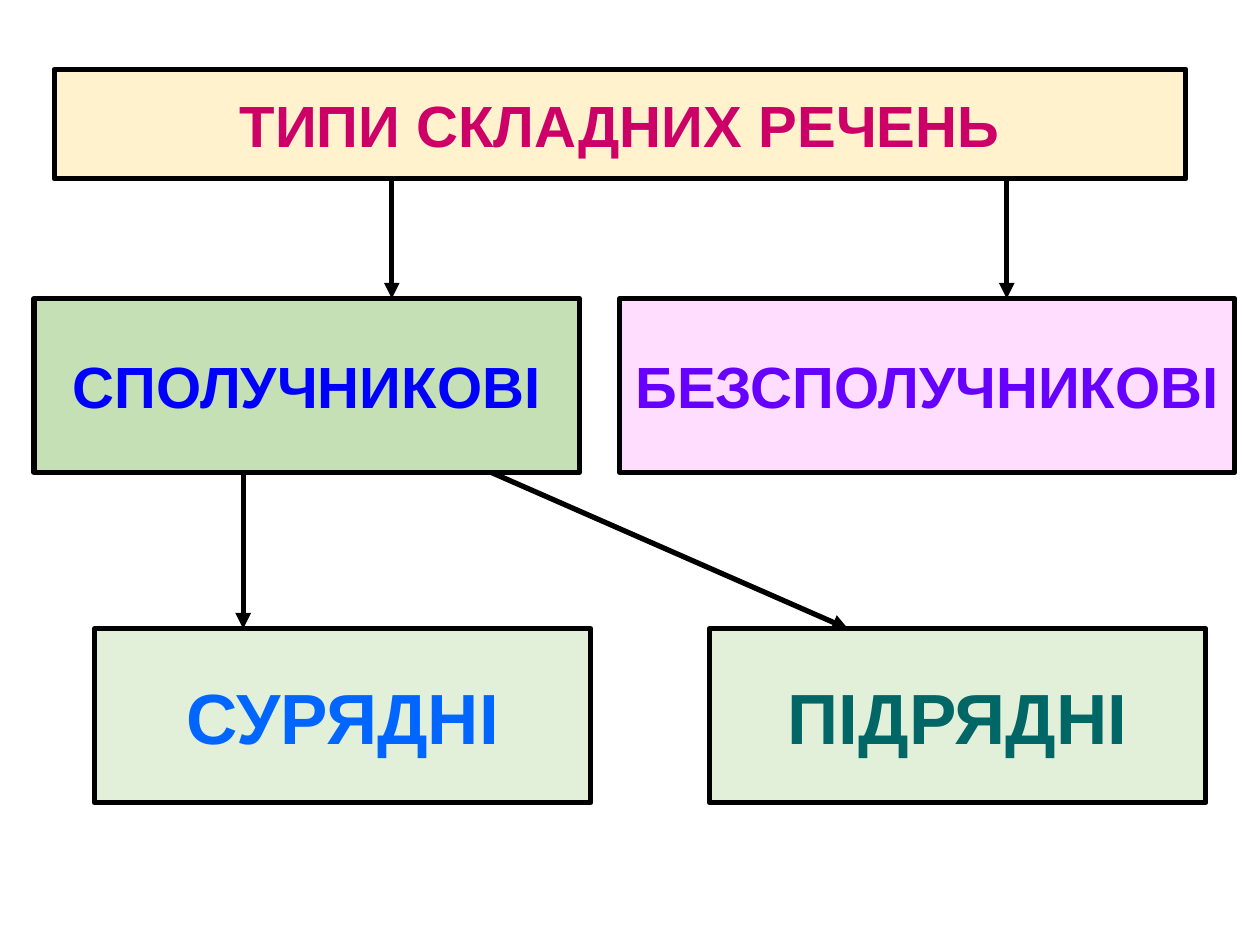
from pptx import Presentation
from pptx.dml.color import RGBColor
from pptx.enum.shapes import MSO_CONNECTOR, MSO_SHAPE
from pptx.enum.text import MSO_ANCHOR, MSO_AUTO_SIZE, PP_ALIGN
from pptx.oxml.ns import qn
from pptx.util import Pt
from lxml.etree import SubElement

TITLE_TOP, TITLE_HEIGHT = 39.6, 62.6
KIND_TOP, SUBKIND_TOP, BOX_HEIGHT = 170.6, 359.3, 99.4
TITLE_BOTTOM = TITLE_TOP + TITLE_HEIGHT
KIND_BOTTOM = KIND_TOP + BOX_HEIGHT


def color(hex_code):
    return RGBColor.from_string(hex_code)


class Diagram:
    """Draws outlined boxes and arrows on one slide; lengths are in points."""

    font_name = "Arial"
    line_color = "000000"
    line_width = 3

    def __init__(self, slide):
        self.slide = slide

    def title(self, text, bounds, fill, text_color, size):
        self._format_box(self.slide.shapes.title, text, bounds, fill, text_color, size)

    def box(self, text, bounds, fill, text_color, size):
        shape = self.slide.shapes.add_shape(MSO_SHAPE.RECTANGLE, *map(Pt, bounds))
        shape.shadow.inherit = False
        self._format_box(shape, text, bounds, fill, text_color, size)

    def arrow(self, start, end):
        connector = self.slide.shapes.add_connector(
            MSO_CONNECTOR.STRAIGHT, *map(Pt, start + end))
        self._outline(connector)
        line_xml = connector.line._get_or_add_ln()
        SubElement(line_xml, qn("a:tailEnd"), type="triangle")
        SubElement(connector._element.spPr, qn("a:effectLst"))

    def _outline(self, shape):
        shape.line.color.rgb = color(self.line_color)
        shape.line.width = Pt(self.line_width)

    def _format_box(self, shape, text, bounds, fill, text_color, size):
        shape.left, shape.top, shape.width, shape.height = map(Pt, bounds)
        shape.fill.solid()
        shape.fill.fore_color.rgb = color(fill)
        self._outline(shape)
        frame = shape.text_frame
        frame.text = text
        frame.auto_size = MSO_AUTO_SIZE.NONE
        frame.word_wrap = False
        frame.vertical_anchor = MSO_ANCHOR.MIDDLE
        paragraph = frame.paragraphs[0]
        paragraph.alignment = PP_ALIGN.CENTER
        font = paragraph.runs[0].font
        font.name = self.font_name
        font.size = Pt(size)
        font.bold = True
        font.color.rgb = color(text_color)


def main():
    presentation = Presentation()
    presentation.slide_width, presentation.slide_height = Pt(720), Pt(540)
    title_only = presentation.slide_layouts[5]
    diagram = Diagram(presentation.slides.add_slide(title_only))

    diagram.title("ТИПИ СКЛАДНИХ РЕЧЕНЬ", (31, TITLE_TOP, 646.6, TITLE_HEIGHT),
                  "FFF2CC", "CC0066", 33.2)

    sentence_kinds = [
        ("СПОЛУЧНИКОВІ", 19.4, KIND_TOP, 311.8, "C5E0B4", "0000FF", 33.2),
        ("БЕЗСПОЛУЧНИКОВІ", 354.2, KIND_TOP, 351.4, "FFDDFF", "6600FF", 33.2),
        ("СУРЯДНІ", 54, SUBKIND_TOP, 283.7, "E2F0D9", "0066FF", 40.6),
        ("ПІДРЯДНІ", 405.4, SUBKIND_TOP, 283.7, "E2F0D9", "006666", 40.6),
    ]
    for text, left, top, width, fill, text_color, size in sentence_kinds:
        diagram.box(text, (left, top, width, BOX_HEIGHT), fill, text_color, size)

    for x in (223.9, 575.3):
        diagram.arrow((x, TITLE_BOTTOM), (x, KIND_TOP))
    for start_x, end_x in ((139, 139), (280.8, 484.6)):
        diagram.arrow((start_x, KIND_BOTTOM), (end_x, SUBKIND_TOP))

    presentation.save("out.pptx")


if __name__ == "__main__":
    main()
